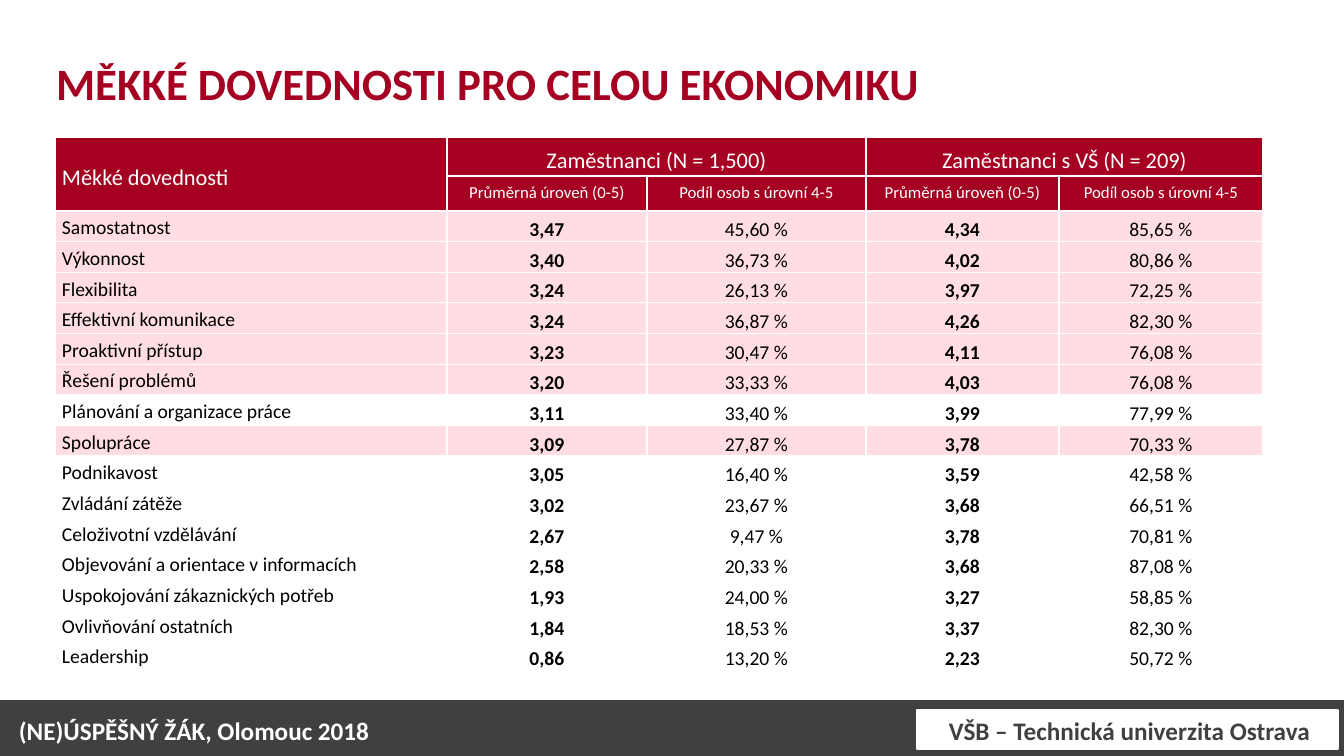
"""Build a slide with a table of soft skills across the whole economy."""
from lxml import etree
from pptx import Presentation
from pptx.dml.color import RGBColor
from pptx.enum.shapes import MSO_SHAPE
from pptx.enum.text import MSO_ANCHOR, MSO_AUTO_SIZE, PP_ALIGN
from pptx.oxml.ns import qn
from pptx.util import Pt

RECT = MSO_SHAPE.RECTANGLE
LEFT, CENTER = PP_ALIGN.LEFT, PP_ALIGN.CENTER
TOP, MIDDLE = MSO_ANCHOR.TOP, MSO_ANCHOR.MIDDLE
COLORS = {"red": "A50021", "pink": "FFDDE3", "gray": "404040",
          "white": "FFFFFF", "black": "000000"}
FONT = "Calibri"

TITLE = "MĚKKÉ DOVEDNOSTI PRO CELOU EKONOMIKU"
FOOTER_LEFT = "(NE)ÚSPĚŠNÝ ŽÁK, Olomouc 2018"
FOOTER_RIGHT = "VŠB – Technická univerzita Ostrava"
SKILL_HEAD = "Měkké dovednosti"
GROUPS = ["Zaměstnanci (N = 1,500)", "Zaměstnanci s VŠ (N = 209)"]
MEASURES = ["Průměrná úroveň (0-5)", "Podíl osob s úrovní 4-5"]
SKILLS = [
    ("Samostatnost", "3,47", "45,60 %", "4,34", "85,65 %"),
    ("Výkonnost", "3,40", "36,73 %", "4,02", "80,86 %"),
    ("Flexibilita", "3,24", "26,13 %", "3,97", "72,25 %"),
    ("Effektivní komunikace", "3,24", "36,87 %", "4,26", "82,30 %"),
    ("Proaktivní přístup", "3,23", "30,47 %", "4,11", "76,08 %"),
    ("Řešení problémů", "3,20", "33,33 %", "4,03", "76,08 %"),
    ("Plánování a organizace práce", "3,11", "33,40 %", "3,99", "77,99 %"),
    ("Spolupráce", "3,09", "27,87 %", "3,78", "70,33 %"),
    ("Podnikavost", "3,05", "16,40 %", "3,59", "42,58 %"),
    ("Zvládání zátěže", "3,02", "23,67 %", "3,68", "66,51 %"),
    ("Celoživotní vzdělávání", "2,67", "9,47 %", "3,78", "70,81 %"),
    ("Objevování a orientace v informacích", "2,58", "20,33 %", "3,68", "87,08 %"),
    ("Uspokojování zákaznických potřeb", "1,93", "24,00 %", "3,27", "58,85 %"),
    ("Ovlivňování ostatních", "1,84", "18,53 %", "3,37", "82,30 %"),
    ("Leadership", "0,86", "13,20 %", "2,23", "50,72 %"),
]
HIGHLIGHTED = {"Samostatnost", "Výkonnost", "Flexibilita", "Effektivní komunikace",
               "Proaktivní přístup", "Řešení problémů", "Spolupráce"}

SLIDE_W, SLIDE_H = 1344, 756
TITLE_BOX = (46, 51, 1261, 65)
TABLE_X, TABLE_Y = 55, 137
COL_WIDTHS = [392, 200, 219, 193, 204]
HEAD_HEIGHTS = [39, 35]
BODY_H = 460
CELL_PAD = 7
BARS = [((0, 701, SLIDE_W, 55), "gray"), ((917, 710, 421, 39), "white")]
FOOTERS = [(FOOTER_LEFT, (9, 710, 374, 40), "white", LEFT, False),
           (FOOTER_RIGHT, (919, 710, 421, 40), "gray", CENTER, True)]


def px(n):
    return round(n * 914400 / 100.8)


def rgb(name):
    return RGBColor.from_string(COLORS[name])


def write(tf, text, size, color, bold=False, para=None):
    p = tf.paragraphs[0]
    for key, value in (para or {}).items():
        setattr(p, key, value)
    r = p.add_run()
    r.text = text
    for key, value in {"name": FONT, "size": Pt(size), "bold": bold}.items():
        setattr(r.font, key, value)
    r.font.color.rgb = rgb(color)


def add_bar(slide, box, color):
    sp = slide.shapes.add_shape(RECT, *map(px, box))
    sp.shadow.inherit = False
    sp.fill.solid()
    sp.fill.fore_color.rgb = rgb(color)
    sp.line.color.rgb = rgb(color)
    sp.line.width = Pt(1)


def add_footer(slide, text, box, color, align, wrap):
    tf = slide.shapes.add_textbox(*map(px, box)).text_frame
    tf.word_wrap = wrap
    tf.auto_size = MSO_AUTO_SIZE.SHAPE_TO_FIT_TEXT
    write(tf, text, 18, color, True, {"alignment": align})


def style_cell(cell, fill):
    tcPr = cell._tc.get_or_add_tcPr()
    for side in ("a:lnL", "a:lnR", "a:lnT", "a:lnB"):
        ln = etree.SubElement(tcPr, qn(side), w=str(Pt(1)))
        solid = etree.SubElement(ln, qn("a:solidFill"))
        etree.SubElement(solid, qn("a:srgbClr"), val=COLORS["white"])
    if fill:
        cell.fill.solid()
        cell.fill.fore_color.rgb = rgb(fill)
    else:
        cell.fill.background()
    for key, value in {"margin_left": px(CELL_PAD), "margin_right": px(CELL_PAD),
                       "margin_top": 0, "margin_bottom": 0,
                       "vertical_anchor": MIDDLE}.items():
        setattr(cell, key, value)


def add_skill_table(slide):
    n_rows = len(HEAD_HEIGHTS) + len(SKILLS)
    heights = HEAD_HEIGHTS + [BODY_H / len(SKILLS)] * len(SKILLS)
    box = (TABLE_X, TABLE_Y, sum(COL_WIDTHS), sum(heights))
    table = slide.shapes.add_table(n_rows, len(COL_WIDTHS), *map(px, box)).table
    table.first_row = table.horz_banding = False
    for col, width in zip(table.columns, COL_WIDTHS):
        col.width = px(width)
    for row, height in zip(table.rows, heights):
        row.height = px(height)
    fills = ["red"] * len(HEAD_HEIGHTS)
    fills += ["pink" if skill[0] in HIGHLIGHTED else None for skill in SKILLS]
    for row, fill in zip(table.rows, fills):
        for cell in row.cells:
            style_cell(cell, fill)

    centered = {"alignment": CENTER, "line_spacing": 1.3}
    table.cell(0, 0).merge(table.cell(1, 0))
    write(table.cell(0, 0).text_frame, SKILL_HEAD, 16, "white",
          para={"line_spacing": 1.3})
    for g, group in enumerate(GROUPS):
        first = 1 + g * len(MEASURES)
        head = table.cell(0, first)
        head.merge(table.cell(0, first + len(MEASURES) - 1))
        write(head.text_frame, group, 16, "white",
              para={**centered, "space_after": Pt(12)})
        for m, measure in enumerate(MEASURES):
            cell = table.cell(1, first + m)
            cell.vertical_anchor = TOP
            write(cell.text_frame, measure, 12, "white", para=centered)
    for i, skill in enumerate(SKILLS, len(HEAD_HEIGHTS)):
        for j, text in enumerate(skill):
            para = centered if j else {"line_spacing": 1.15}
            write(table.cell(i, j).text_frame, text, 14, "black", j % 2 == 1, para)


def main():
    prs = Presentation()
    prs.slide_width, prs.slide_height = px(SLIDE_W), px(SLIDE_H)
    slide = prs.slides.add_slide(prs.slide_layouts[5])
    title = slide.shapes.title
    for key, value in zip(("left", "top", "width", "height"), TITLE_BOX):
        setattr(title, key, px(value))
    tf = title.text_frame
    tf.word_wrap = True
    tf.vertical_anchor = TOP
    tf.auto_size = MSO_AUTO_SIZE.SHAPE_TO_FIT_TEXT
    write(tf, TITLE, 32, "red", True, {"alignment": LEFT})
    for box, color in BARS:
        add_bar(slide, box, color)
    for footer in FOOTERS:
        add_footer(slide, *footer)
    add_skill_table(slide)
    prs.save("out.pptx")


if __name__ == "__main__":
    main()
